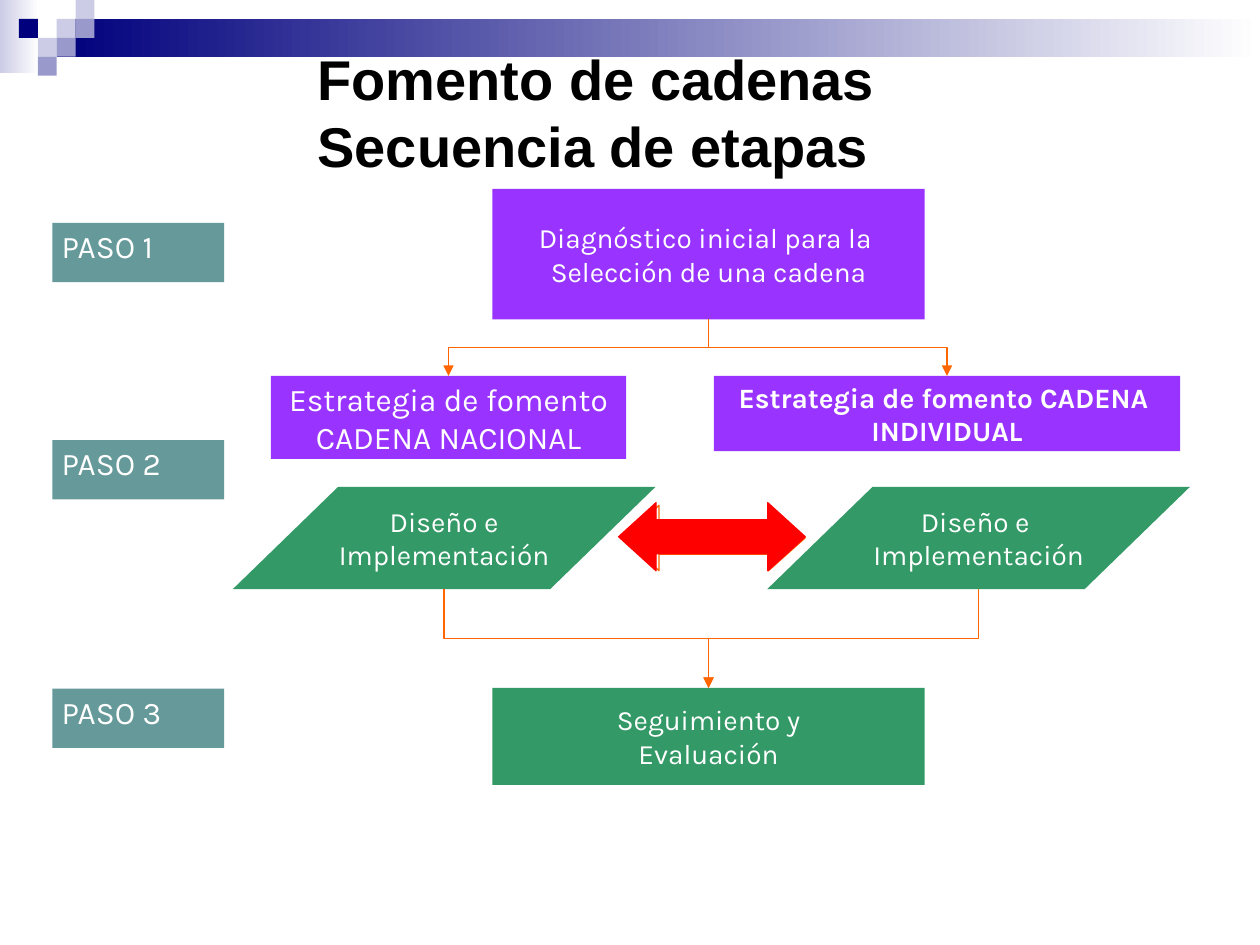
import pptx
import pptx.util
import pptx.dml.color
import pptx.enum.shapes
import pptx.enum.text
import pptx.oxml
import pptx.oxml.ns

Pt = pptx.util.Pt
SHAPE = pptx.enum.shapes.MSO_SHAPE
ANCHOR = pptx.enum.text.MSO_ANCHOR
ALIGN = pptx.enum.text.PP_ALIGN

# Content
TITLE = "Fomento de cadenas \vSecuencia de etapas"
PURPLE, GREEN, TEAL = "9933FF", "339966", "669999"
ORANGE, RED, WHITE, BLACK = "FF6600", "FF0000", "FFFFFF", "000000"
NAVY, LAVENDER, LILAC = "00007D", "CCCCE6", "9999CC"

# Stages: text, left, top, width, height, fill, size, bold, anchor
TOP, MIDDLE = ANCHOR.TOP, ANCHOR.MIDDLE
STAGES = {
    "diagnosis": ("Diagnóstico inicial para la \nSelección de una cadena",
                  281.4, 108, 247, 74.5, PURPLE, 16, False, MIDDLE),
    "national": ("Estrategia de fomento CADENA NACIONAL",
                 154.8, 214.8, 203, 47.5, PURPLE, 18, False, TOP),
    "individual": ("Estrategia de fomento CADENA  INDIVIDUAL",
                   408, 214.8, 266.4, 43, PURPLE, 16, True, TOP),
    "follow_up": ("Seguimiento y\nEvaluación",
                  281.4, 393.1, 247, 55.4, GREEN, 16, False, MIDDLE),
}
DESIGNS = {
    "national_design": ("Diseño e\nImplementación", 133),
    "individual_design": ("Diseño e \nImplementación", 438.4),
}
DESIGN_TOP, DESIGN_WIDTH, DESIGN_HEIGHT = 278.2, 241.6, 58.5
LINKS = [("diagnosis", "national"), ("diagnosis", "individual"),
         ("national_design", "follow_up"), ("individual_design", "follow_up")]
STEPS = [("PASO 1", 127.4), ("PASO 2", 251.5), ("PASO 3", 393.5)]

# Corner ornament: squares on a grid as column, row, colour
CELL = 10.8
SQUARES = [(3, 1, LAVENDER), (4, 0, LAVENDER), (4, 1, LILAC), (2, 2, LAVENDER),
           (1, 1, NAVY), (3, 2, LILAC), (2, 3, LILAC)]
FADES = [(0, 0, 22.3, 41.8, LAVENDER), (32.4, CELL, 687.6, 21.6, NAVY)]

prs = pptx.Presentation()
prs.slide_width, prs.slide_height = Pt(720), Pt(540)
slide = prs.slides.add_slide(prs.slide_layouts[5])


def rgb(code):
    return pptx.dml.color.RGBColor.from_string(code)


def add_block(kind, left, top, width, height, fill=None, line=None):
    block = slide.shapes.add_shape(kind, Pt(left), Pt(top), Pt(width), Pt(height))
    block.shadow.inherit = False
    if fill:
        block.fill.solid()
        block.fill.fore_color.rgb = rgb(fill)
    else:
        block.fill.background()
    if line:
        block.line.color.rgb = rgb(line)
        block.line.width = Pt(0.75)
    else:
        block.line.fill.background()
    return block


def write(block, text, size, bold=False, anchor=TOP, align=ALIGN.CENTER):
    frame = block.text_frame
    frame.word_wrap = True
    frame.vertical_anchor = anchor
    frame.margin_left = frame.margin_right = Pt(5.2)
    frame.margin_top = frame.margin_bottom = Pt(2.5)
    frame.text = text
    for paragraph in frame.paragraphs:
        paragraph.alignment = align
        paragraph.font.name = "Karla"
        paragraph.font.size = Pt(size)
        paragraph.font.bold = bold
        paragraph.font.color.rgb = rgb(WHITE)


def add_link(start, end):
    """Elbow arrow from the bottom of one stage to the top of another."""
    x1, y1 = start.left + start.width // 2, start.top + start.height
    x2, y2 = end.left + end.width // 2, end.top
    # The frame is laid out on its side, then turned a quarter
    mid_x, mid_y = (x1 + x2) // 2, (y1 + y2) // 2
    half_w, half_h = (y2 - y1) // 2, abs(x2 - x1) // 2
    link = slide.shapes.add_connector(
        pptx.enum.shapes.MSO_CONNECTOR.ELBOW,
        mid_x - half_w, mid_y - half_h, mid_x + half_w, mid_y + half_h)
    frame = link._element.spPr.find(pptx.oxml.ns.qn("a:xfrm"))
    if x2 < x1:
        frame.set("rot", "5400000")
    else:
        frame.set("rot", "16200000")
        frame.set("flipH", "1")
    link.line.color.rgb = rgb(ORANGE)
    link.line.width = Pt(0.75)
    ns = pptx.oxml.ns.nsdecls("a")
    link.line._get_or_add_ln().append(
        pptx.oxml.parse_xml(f'<a:tailEnd {ns} type="triangle"/>'))
    link._element.spPr.append(pptx.oxml.parse_xml(f"<a:effectLst {ns}/>"))


# Corner ornament
for left, top, width, height, colour in FADES:
    fade = add_block(SHAPE.RECTANGLE, left, top, width, height, colour)
    fade.fill.gradient()
    fade.fill.gradient_angle = 0
    for stop, (position, shade) in zip(fade.fill.gradient_stops,
                                       [(0, colour), (1, WHITE)]):
        stop.position = position
        stop.color.rgb = rgb(shade)
for column, row, colour in SQUARES:
    add_block(SHAPE.RECTANGLE, column * CELL, row * CELL, CELL, CELL, colour)

# Title, brought in front of the ornament
title = slide.shapes.title
slide.shapes._spTree.append(title._element)
title.left, title.top, title.width, title.height = Pt(174.2), Pt(10.8), Pt(501), Pt(105.8)
title.text_frame.text = TITLE
title.text_frame.vertical_anchor = MIDDLE
heading = title.text_frame.paragraphs[0]
heading.alignment = ALIGN.LEFT
heading.font.name = "Arial"
heading.font.size = Pt(32)
heading.font.bold = True
heading.font.color.rgb = rgb(BLACK)

# Stages
stages = {}
for key, (text, left, top, width, height, fill, size, bold, anchor) in STAGES.items():
    stages[key] = add_block(SHAPE.RECTANGLE, left, top, width, height, fill)
    write(stages[key], text, size, bold, anchor)
for key, (text, left) in DESIGNS.items():
    stages[key] = add_block(SHAPE.PARALLELOGRAM, left, DESIGN_TOP,
                            DESIGN_WIDTH, DESIGN_HEIGHT, GREEN)
    stages[key].adjustments[0] = 1.03
    write(stages[key], text, 16, anchor=MIDDLE)

# Links between stages
for start, end in LINKS:
    add_link(stages[start], stages[end])

# Exchange between the two designs: outline behind, red arrow in front
outline = add_block(SHAPE.LEFT_RIGHT_ARROW, 355.7, 288.7, 104.4, 37.4, line=ORANGE)
outline.adjustments[1] = 0.56

# Step labels
for text, top in STEPS:
    label = add_block(SHAPE.RECTANGLE, 30, top, 98.2, 33.9, TEAL)
    write(label, text, 18, align=ALIGN.LEFT)

exchange = add_block(SHAPE.LEFT_RIGHT_ARROW, 353.5, 287.3, 106.6, 38.9, RED, RED)
exchange.adjustments[1] = 0.55

prs.save("out.pptx")
